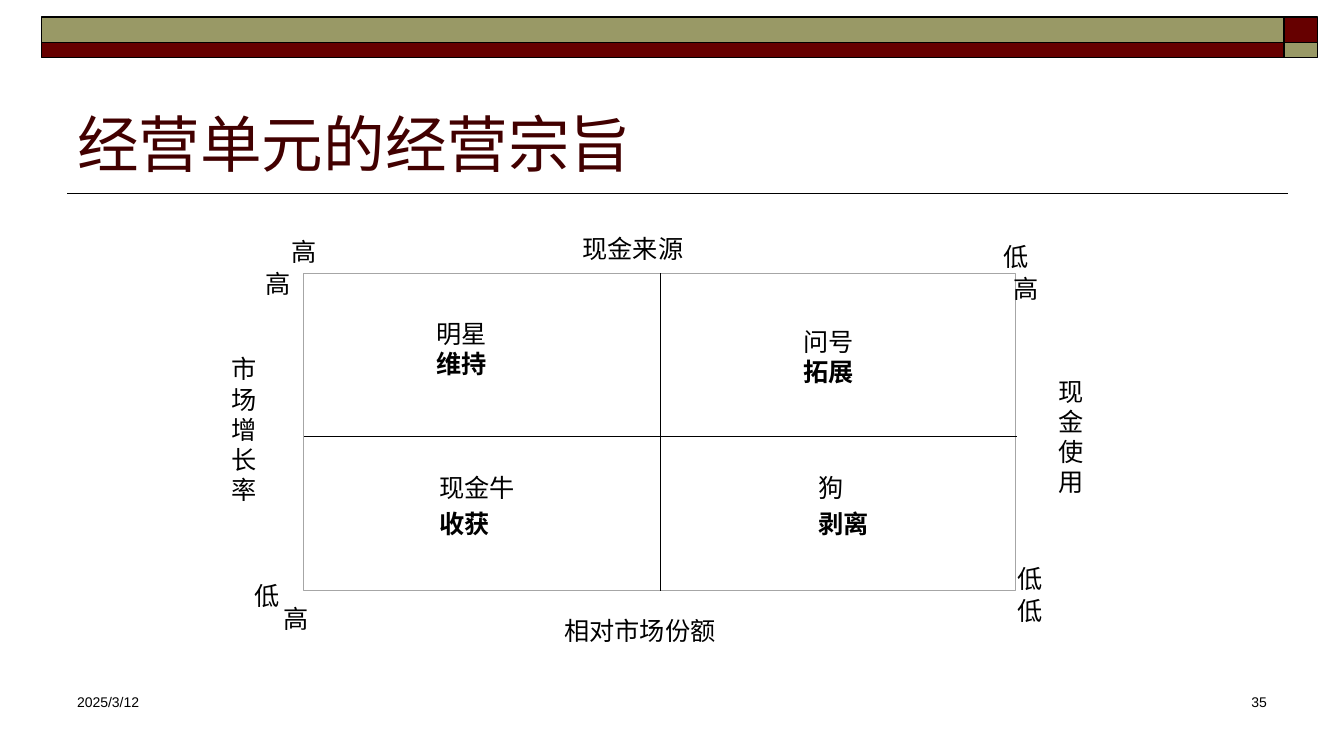
from lxml import etree
from pptx import Presentation
from pptx.dml.color import RGBColor
from pptx.enum.shapes import MSO_CONNECTOR as CONN, MSO_SHAPE as SHAPE
from pptx.enum.text import MSO_ANCHOR as ANCHOR, PP_ALIGN as ALIGN
from pptx.oxml.ns import qn
from pptx.util import Pt

CJK = "Noto Sans CJK SC"


def rgb(value):
    return RGBColor.from_string(value)


def add_text(x, y, w, h, text, size=18, font="Times New Roman", color="000000"):
    tf = s.shapes.add_textbox(Pt(x), Pt(y), Pt(w), Pt(h)).text_frame
    tf.word_wrap = True
    tf.text = text
    for p in tf.paragraphs:
        p.space_before = Pt(3.6)
        for r in p.runs:
            r.font.size = Pt(size)
            r.font.name = font
            r.font.color.rgb = rgb(color)
            etree.SubElement(r.font._element, qn("a:ea")).set("typeface", CJK)
    return tf


prs = Presentation()
prs.slide_width, prs.slide_height = Pt(960), Pt(540)
s = prs.slides.add_slide(prs.slide_layouts[6])

# Header bands and matrix frame
boxes = [
    (917.3, 12.2, 23.8, 18, "660000", "000000", 1),
    (29.5, 12.2, 887.8, 18, "999966", "000000", 1),
    (29.5, 30.2, 887.8, 10.8, "660000", "000000", 1),
    (917.3, 30.2, 23.8, 10.8, "999966", "000000", 1),
    (216.7, 195.1, 509, 226.8, None, "A6A6A6", 0.75),
]
for x, y, w, h, fill, line, weight in boxes:
    sp = s.shapes.add_shape(SHAPE.RECTANGLE, Pt(x), Pt(y), Pt(w), Pt(h))
    sp.shadow.inherit = False
    if fill:
        sp.fill.solid()
        sp.fill.fore_color.rgb = rgb(fill)
    else:
        sp.fill.background()
    sp.line.color.rgb = rgb(line)
    sp.line.width = Pt(weight)

# Title rule and matrix dividers
lines = [
    (48, 138.2, 920.2, 138.2, 1),
    (217.4, 311.8, 726.5, 311.8, 0.75),
    (471.6, 195.1, 471.6, 421.9, 0.75),
]
for x1, y1, x2, y2, weight in lines:
    c = s.shapes.add_connector(CONN.STRAIGHT, Pt(x1), Pt(y1), Pt(x2), Pt(y2))
    c.line.color.rgb = rgb("000000")
    c.line.width = Pt(weight)
    etree.SubElement(c._element.spPr, qn("a:effectLst"))

# Title and footer
title = add_text(48, 41.8, 864, 90, "经营单元的经营宗旨", 44, CJK, "420000")
title.vertical_anchor = ANCHOR.BOTTOM
add_text(48, 491.8, 175.7, 36, "2025/3/12", 10, "Arial")
number = add_text(712, 491.8, 200, 36, "35", 10, "Arial")
number.paragraphs[0].alignment = ALIGN.RIGHT

# Axis names: the narrow boxes stack one character per line
add_text(158.4, 249.1, 33.1, 116.6, "市场增长率")
add_text(748.8, 265, 33.1, 94.3, "现金使用")
add_text(396, 436.3, 134.6, 28.8, "相对市场份额")
add_text(409, 163.4, 92.9, 28.8, "现金来源")

# High and low ends of the axes
ends = [
    ("高", 182.9, 187.9), ("低", 175, 411.1), ("低", 709.9, 168.5),
    ("低", 720, 398.9), ("低", 720, 421.9), ("高", 717.1, 191.5),
    ("高", 200.9, 165.6), ("高", 195.8, 427.7),
]
for text, x, y in ends:
    add_text(x, y, 33.1, 28.8, text)

# Quadrants: unit type, then its strategy in bold
quadrants = [
    (304.6, 223.9, 65.5, 51.1, "明星\v维持"),
    (566.6, 229.7, 65.5, 51.1, "问号\v拓展"),
    (306.7, 334.1, 76.3, 55.4, "现金牛\n收获"),
    (577.4, 334.1, 65.5, 55.4, "狗\n剥离"),
]
for x, y, w, h, text in quadrants:
    tf = add_text(x, y, w, h, text)
    tf.paragraphs[-1].runs[-1].font.bold = True

prs.save("out.pptx")
